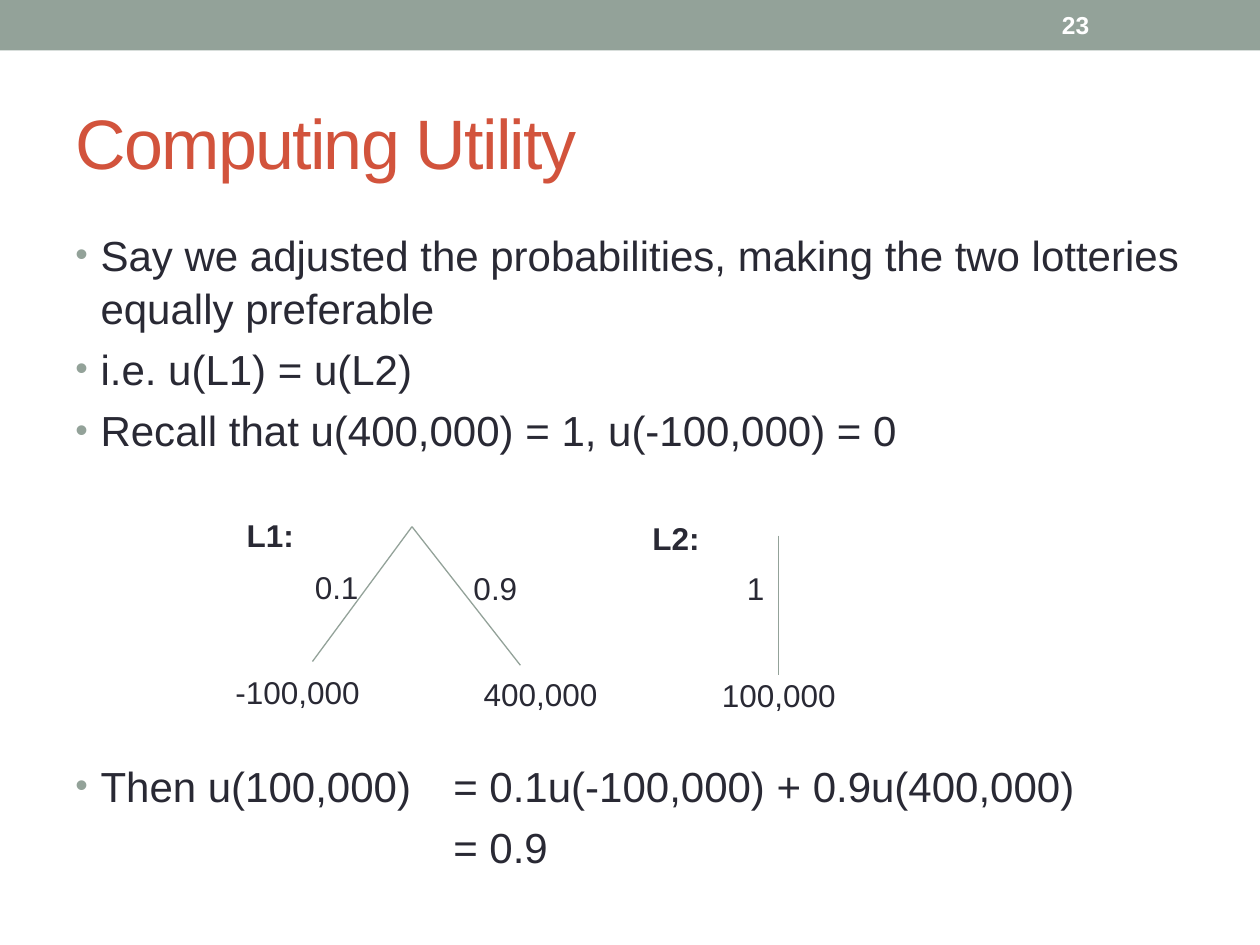
from dataclasses import dataclass

from pptx import Presentation
from pptx.dml.color import RGBColor
from pptx.enum.shapes import MSO_CONNECTOR, MSO_SHAPE
from pptx.enum.text import MSO_ANCHOR, PP_ALIGN
from pptx.oxml.ns import qn
from pptx.util import Inches, Pt
from lxml.etree import SubElement


@dataclass(frozen=True)
class Theme:
    font: str = "Arial"
    accent: RGBColor = RGBColor(0x93, 0xA2, 0x99)
    title: RGBColor = RGBColor(0xD2, 0x53, 0x3C)
    text: RGBColor = RGBColor(0x29, 0x29, 0x34)
    white: RGBColor = RGBColor(0xFF, 0xFF, 0xFF)
    title_size: int = 40
    body_size: int = 24
    label_size: int = 18
    number_size: int = 14


THEME = Theme()
TITLE_ONLY = 5


def format_runs(paragraph, size, color, bold=False):
    for run in paragraph.runs:
        font = run.font
        font.name, font.size, font.bold = THEME.font, Pt(size), bold
        font.color.rgb = color


def add_text(slide, box, text, size, color, bold=False, anchor=MSO_ANCHOR.TOP):
    shape = slide.shapes.add_textbox(*map(Inches, box))
    frame = shape.text_frame
    frame.word_wrap = True
    frame.vertical_anchor = anchor
    frame.text = text
    for paragraph in frame.paragraphs:
        format_runs(paragraph, size, color, bold)
    return shape


def add_header(slide, box, number):
    left, top, width, height = box
    bar = slide.shapes.add_shape(MSO_SHAPE.RECTANGLE, *map(Inches, box))
    bar.shadow.inherit = False
    bar.fill.solid()
    bar.fill.fore_color.rgb = THEME.accent
    bar.line.fill.background()
    add_text(slide, (left + width - 1.67, top + 0.02, 1.17, height - 0.04), number,
             THEME.number_size, THEME.white, True, MSO_ANCHOR.MIDDLE)


def set_title(slide, box, text):
    title = slide.shapes.title
    title.left, title.top, title.width, title.height = map(Inches, box)
    frame = title.text_frame
    frame.text = text
    frame.vertical_anchor = MSO_ANCHOR.MIDDLE
    paragraph = frame.paragraphs[0]
    paragraph.alignment = PP_ALIGN.LEFT
    format_runs(paragraph, THEME.title_size, THEME.title)
    paragraph.runs[0].font._element.set("spc", "-100")


def indent(paragraph, margin, first_line=0):
    properties = paragraph._p.get_or_add_pPr()
    properties.set("marL", str(Inches(margin)))
    properties.set("indent", str(Inches(first_line)))
    return properties


def add_bullet(paragraph):
    properties = indent(paragraph, 0.2, -0.2)
    color = SubElement(properties, qn("a:buClr"))
    SubElement(color, qn("a:srgbClr"), val=str(THEME.accent))
    SubElement(properties, qn("a:buSzPct"), val="85000")
    SubElement(properties, qn("a:buFont"), typeface=THEME.font)
    SubElement(properties, qn("a:buChar"), char="•")


def add_body(slide, box, bullets, conclusion, result):
    """Bullets, then a gap for the lottery trees, then the conclusion and its result."""
    lines = [*bullets, conclusion, result]
    body = add_text(slide, box, "\n".join(lines), THEME.body_size, THEME.text)
    paragraphs = body.text_frame.paragraphs
    for paragraph in paragraphs:
        paragraph.line_spacing = 1.05
        paragraph.space_before = Pt(4.8)
    paragraphs[len(bullets)].space_before = Pt(173)
    for paragraph in paragraphs[:-1]:
        add_bullet(paragraph)
    indent(paragraphs[-1], 3)


def add_branch(slide, start, end):
    line = slide.shapes.add_connector(MSO_CONNECTOR.STRAIGHT, *map(Inches, (*start, *end)))
    line.line.color.rgb = THEME.accent
    line.line.width = Pt(0.75)
    SubElement(line._element.spPr, qn("a:effectLst"))


def add_lottery(slide, box, name, root, branches):
    """Draw a tree in the box; each branch is (end, labels), all offsets from its corner."""
    left, top, width, height = box

    def place(point):
        return left + point[0], top + point[1]

    for end, labels in branches:
        add_branch(slide, place(root), place(end))
        for text, point, label_width in labels:
            add_text(slide, (*place(point), label_width, 0.4), text,
                     THEME.label_size, THEME.text)
    add_text(slide, (left, top, 0.71, 0.4), name, THEME.label_size, THEME.text, True)


def main():
    presentation = Presentation()
    presentation.slide_width, presentation.slide_height = Inches(10), Inches(7.5)
    slide = presentation.slides.add_slide(presentation.slide_layouts[TITLE_ONLY])

    add_header(slide, (0, 0, 10, 0.4), "23")
    set_title(slide, (0.5, 0.58, 9, 1.08), "Computing Utility")
    add_body(
        slide, (0.5, 1.75, 9, 5.33),
        ["Say we adjusted the probabilities, making the two lotteries equally preferable",
         "i.e. u(L1) = u(L2)",
         "Recall that u(400,000) = 1, u(-100,000) = 0"],
        "Then u(100,000) \t= 0.1u(-100,000) + 0.9u(400,000)",
        "= 0.9",
    )
    add_lottery(slide, (1.86, 4.05, 3.06, 1.66), "L1:", (1.41, 0.13), [
        ((0.62, 1.2), [("0.1", (0.54, 0.41), 0.56), ("-100,000", (-0.09, 1.24), 1.38)]),
        ((2.27, 1.23), [("0.9", (1.8, 0.42), 0.57), ("400,000", (1.88, 1.26), 1.18)]),
    ])
    add_lottery(slide, (5.08, 4.07, 1.73, 1.65), "L2:", (1.1, 0.18), [
        ((1.1, 1.29), [("1", (0.75, 0.4), 0.34), ("100,000", (0.55, 1.25), 1.18)]),
    ])
    presentation.save("out.pptx")


if __name__ == "__main__":
    main()
